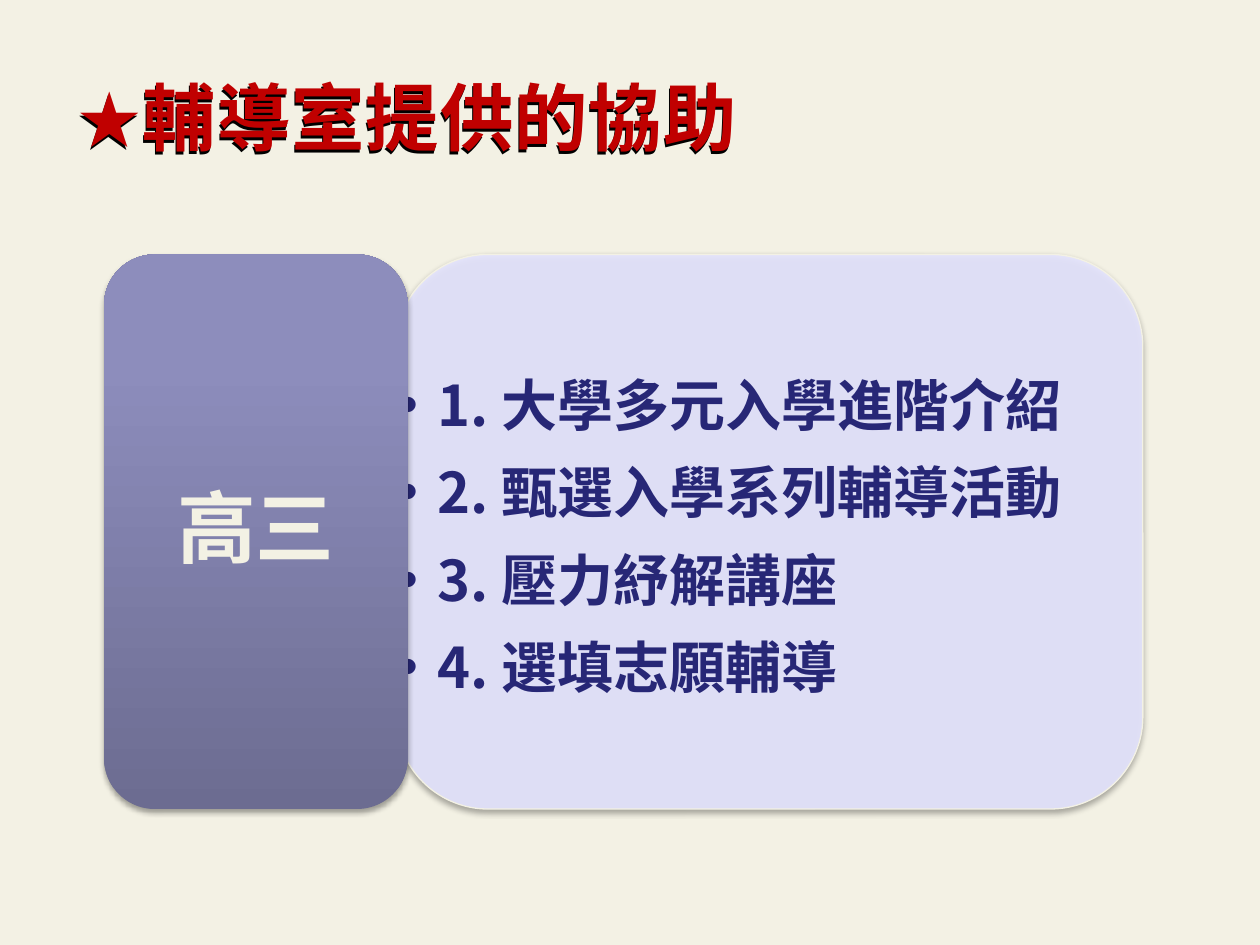
"""Build the slide listing the counselling office's support for third-year students."""
from dataclasses import dataclass

from lxml.etree import SubElement
from pptx import Presentation
from pptx.dml.color import RGBColor
from pptx.enum.shapes import MSO_SHAPE
from pptx.enum.text import MSO_ANCHOR, PP_ALIGN
from pptx.oxml.ns import qn
from pptx.util import Cm, Pt

TITLE = "輔導室提供的協助"
GRADE = "高三"
SERVICES = [
    "大學多元入學進階介紹",
    "甄選入學系列輔導活動",
    "壓力紓解講座",
    "選填志願輔導",
]


@dataclass(frozen=True)
class Theme:
    font: str = "Noto Sans CJK SC"
    bullet_font: str = "Arial"
    background: str = "F3F1E4"
    title: str = "C00000"
    body: str = "272776"
    panel: str = "E5E5FF"
    shadow: str = "000000"
    gradient: tuple = ((0, "6C6C91"), (80, "8D8DBC"), (100, "8C8CBE"))
    title_size: int = 42
    body_size: int = 32
    grade_size: int = 45


THEME = Theme()
TOP, HEIGHT = 5.13, 11.18
GRADE_BOX = (2.1, TOP, 6.12, HEIGHT)
LIST_BOX = (7.98, TOP, 15.06, HEIGHT)
TITLE_BOX = (1.33, 1.32, 13.94, 2.06)


def add_element(parent, tag, **attributes):
    element = SubElement(parent, qn(tag))
    for name, value in attributes.items():
        element.set(name, str(value))
    return element


def add_shadow(shape, blur, distance, angle, opacity):
    effects = add_element(shape.element.spPr, "a:effectLst")
    shadow = add_element(effects, "a:outerShdw", blurRad=Pt(blur), dist=Pt(distance),
                         dir=angle * 60000, algn="ctr", rotWithShape=0)
    color = add_element(shadow, "a:srgbClr", val=THEME.shadow)
    add_element(color, "a:alpha", val=opacity * 1000)


def add_panel(slide, box):
    panel = slide.shapes.add_shape(MSO_SHAPE.ROUNDED_RECTANGLE, *map(Cm, box))
    panel.fill.solid()
    panel.fill.fore_color.rgb = RGBColor.from_string(THEME.panel)
    color = panel.element.spPr.find(qn("a:solidFill")).find(qn("a:srgbClr"))
    add_element(color, "a:alpha", val=90000)
    panel.line.color.rgb = RGBColor.from_string(THEME.background)
    panel.line.width = Pt(0.75)
    add_shadow(panel, 3.1, 1.8, 90, 35)


def add_gradient_panel(slide, box):
    panel = slide.shapes.add_shape(MSO_SHAPE.ROUNDED_RECTANGLE, *map(Cm, box))
    gradient = add_element(panel.element.spPr, "a:gradFill", rotWithShape=1)
    stops = add_element(gradient, "a:gsLst")
    for position, color in THEME.gradient:
        stop = add_element(stops, "a:gs", pos=position * 1000)
        add_element(stop, "a:srgbClr", val=color)
    add_element(gradient, "a:lin", ang=270 * 60000, scaled=0)
    panel.line.fill.background()
    add_shadow(panel, 3.1, 1.8, 90, 35)


def add_text_box(slide, box, margins, anchor=MSO_ANCHOR.MIDDLE, wrap=True):
    text_box = slide.shapes.add_textbox(*map(Cm, box))
    frame = text_box.text_frame
    frame.word_wrap = wrap
    frame.vertical_anchor = anchor
    frame.margin_left = frame.margin_right = Cm(margins[0])
    frame.margin_top = frame.margin_bottom = Cm(margins[1])
    return text_box


def add_bullet(paragraph, character, indent, font, size=100):
    properties = paragraph._p.get_or_add_pPr()
    properties.set("marL", str(Cm(indent)))
    properties.set("indent", str(-Cm(indent)))
    add_element(properties, "a:buSzPct", val=size * 1000)
    add_element(properties, "a:buFont", typeface=font)
    add_element(properties, "a:buChar", char=character)


def add_run(paragraph, text, size, color, spacing=0):
    run = paragraph.add_run()
    run.text = text
    run.font.size = Pt(size)
    run.font.bold = True
    run.font.color.rgb = RGBColor.from_string(color)
    run.font.name = THEME.font
    properties = run._r.get_or_add_rPr()
    add_element(properties, "a:ea", typeface=THEME.font)
    if spacing:
        properties.set("spc", str(round(spacing * 100)))


def add_title(slide):
    text_box = add_text_box(slide, TITLE_BOX, (0.25, 0.13), MSO_ANCHOR.TOP, False)
    add_shadow(text_box, 0, 1.8, 110, 100)
    paragraph = text_box.text_frame.paragraphs[0]
    add_bullet(paragraph, "★", 1.3, THEME.font, 85)
    add_run(paragraph, TITLE, THEME.title_size, THEME.title, 0.5)


def add_services(slide):
    frame = add_text_box(slide, LIST_BOX, (0.05, 0.05)).text_frame
    for number, service in enumerate(SERVICES, 1):
        paragraph = frame.paragraphs[0] if number == 1 else frame.add_paragraph()
        paragraph.line_spacing = Pt(42)
        paragraph.space_after = Pt(8)
        add_bullet(paragraph, "•", 0.79, THEME.bullet_font)
        add_run(paragraph, f"{number}. {service}", THEME.body_size, THEME.body)


def add_grade(slide):
    paragraph = add_text_box(slide, GRADE_BOX, (0.48, 0.23)).text_frame.paragraphs[0]
    paragraph.alignment = PP_ALIGN.CENTER
    paragraph.line_spacing = 0.9
    add_run(paragraph, GRADE, THEME.grade_size, THEME.background)


def main():
    presentation = Presentation()
    presentation.slide_width, presentation.slide_height = Cm(25.4), Cm(19.05)
    slide = presentation.slides.add_slide(presentation.slide_layouts[6])
    slide.background.fill.solid()
    slide.background.fill.fore_color.rgb = RGBColor.from_string(THEME.background)
    add_title(slide)
    add_panel(slide, LIST_BOX)
    add_services(slide)
    add_gradient_panel(slide, GRADE_BOX)
    add_grade(slide)
    presentation.save("out.pptx")


if __name__ == "__main__":
    main()
